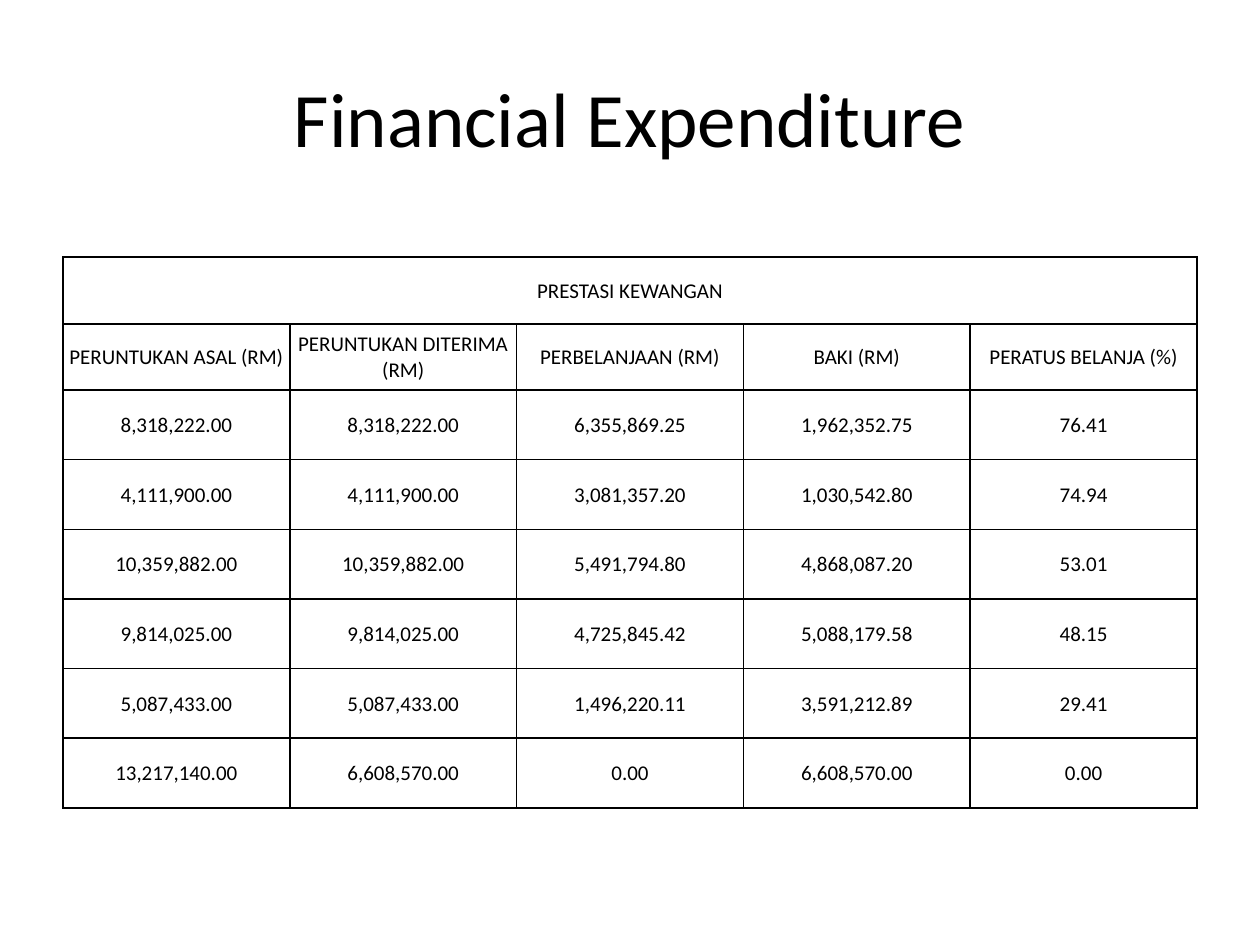
import dataclasses

import lxml.etree
import pptx
import pptx.dml.color
import pptx.enum.text
import pptx.oxml.ns
import pptx.util

SCALE = 914400 / 126


@dataclasses.dataclass(frozen=True)
class Theme:
    font: str = "Calibri"
    ink: str = "000000"
    title: int = 44
    body: int = 12
    rule: int = 1


def emu(px):
    return pptx.util.Emu(round(px * SCALE))


class Deck:
    """Holds the theme and the current slide, and draws each kind of element."""

    def __init__(self, theme, width, height):
        self.theme = theme
        self.file = pptx.Presentation()
        self.file.slide_width = emu(width)
        self.file.slide_height = emu(height)
        self.slide = self.file.slides.add_slide(self.file.slide_layouts[6])

    def label(self, frame, text, size):
        frame.text = text
        frame.word_wrap = True
        for para in frame.paragraphs:
            para.alignment = pptx.enum.text.PP_ALIGN.CENTER
            for run in para.runs:
                run.font.name = self.theme.font
                run.font.size = pptx.util.Pt(size)
                run.font.color.rgb = pptx.dml.color.RGBColor.from_string(self.theme.ink)

    def title(self, text, left, top, width, height):
        box = self.slide.shapes.add_textbox(*map(emu, (left, top, width, height)))
        self.label(box.text_frame, text, self.theme.title)
        box.text_frame.vertical_anchor = pptx.enum.text.MSO_ANCHOR.MIDDLE

    def border(self, cell):
        props = cell._tc.get_or_add_tcPr()
        name = pptx.oxml.ns.qn
        for side in ("a:lnL", "a:lnR", "a:lnT", "a:lnB"):
            line = lxml.etree.SubElement(props, name(side), w=str(pptx.util.Pt(self.theme.rule)))
            fill = lxml.etree.SubElement(line, name("a:solidFill"))
            lxml.etree.SubElement(fill, name("a:srgbClr"), val=self.theme.ink)

    def cell(self, cell, text):
        self.label(cell.text_frame, text, self.theme.body)
        cell.vertical_anchor = pptx.enum.text.MSO_ANCHOR.MIDDLE
        cell.margin_left = cell.margin_right = cell.margin_top = emu(1)
        cell.margin_bottom = 0
        self.border(cell)
        cell.fill.background()

    def table(self, head, names, data, left, top, width, heights, rest):
        rows = [[head] + [""] * (len(names) - 1), names, *data]
        tall = sum(heights) + rest
        place = map(emu, (left, top, width, tall))
        grid = self.slide.shapes.add_table(len(rows), len(names), *place).table
        grid.first_row = grid.horz_banding = False
        for col in grid.columns:
            col.width = emu(width) // len(names)
        for i, row in enumerate(grid.rows):
            row.height = emu(heights[i]) if i < len(heights) else emu(rest) // len(data)
        for i, row in enumerate(rows):
            for j, text in enumerate(row):
                self.cell(grid.cell(i, j), text)
        grid.cell(0, 0).merge(grid.cell(0, len(names) - 1))


NAMES = [
    "PERUNTUKAN ASAL (RM)",
    "PERUNTUKAN DITERIMA (RM)",
    "PERBELANJAAN (RM)",
    "BAKI (RM)",
    "PERATUS BELANJA (%)",
]
DATA = [
    ["8,318,222.00", "8,318,222.00", "6,355,869.25", "1,962,352.75", "76.41"],
    ["4,111,900.00", "4,111,900.00", "3,081,357.20", "1,030,542.80", "74.94"],
    ["10,359,882.00", "10,359,882.00", "5,491,794.80", "4,868,087.20", "53.01"],
    ["9,814,025.00", "9,814,025.00", "4,725,845.42", "5,088,179.58", "48.15"],
    ["5,087,433.00", "5,087,433.00", "1,496,220.11", "3,591,212.89", "29.41"],
    ["13,217,140.00", "6,608,570.00", "0.00", "6,608,570.00", "0.00"],
]


def main():
    deck = Deck(Theme(), 1260, 945)
    deck.title("Financial Expenditure", 63, 38, 1134, 157)
    deck.table("PRESTASI KEWANGAN", NAMES, DATA, 63, 257, 1134, [67, 66], 418)
    deck.file.save("out.pptx")


if __name__ == "__main__":
    main()
